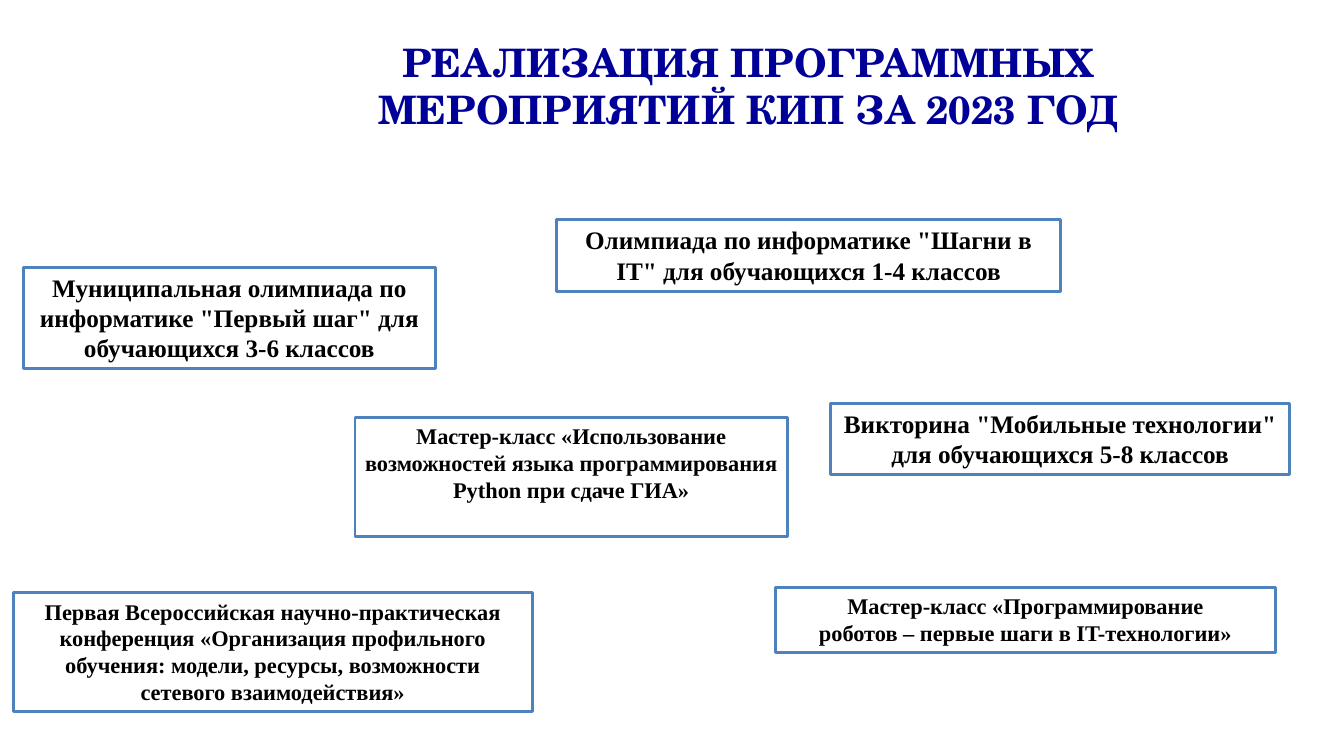
from pptx import Presentation
from pptx.dml.color import RGBColor
from pptx.enum.shapes import MSO_SHAPE
from pptx.enum.text import MSO_ANCHOR, PP_ALIGN
from pptx.util import Pt

RECTANGLE = MSO_SHAPE.RECTANGLE
TOP = MSO_ANCHOR.TOP
CENTER = PP_ALIGN.CENTER

PX = 9144
SLIDE_SIZE = (1333, 750)
COLORS = {"title": "000099", "text": "000000", "fill": "FFFFFF", "border": "4F81BD"}
TITLE_FONT = "TeX Gyre Schola"
EVENT_FONT = "Times New Roman"

TITLE = "РЕАЛИЗАЦИЯ ПРОГРАММНЫХ МЕРОПРИЯТИЙ КИП ЗА 2023 ГОД"
TITLE_BOX = (305, 33, 874, 104)

EVENTS = [
    ((552, 218, 500, 71), 18,
     ['Олимпиада по информатике "Шагни в IT" для обучающихся 1-4 классов']),
    ((23, 265, 409, 101), 18,
     ['Муниципальная олимпиада по информатике "Первый шаг" для обучающихся 3-6 классов']),
    ((824, 400, 455, 71), 18,
     ['Викторина "Мобильные технологии"', "для обучающихся 5-8 классов"]),
    ((13, 588, 515, 118), 16,
     ["Первая Всероссийская научно-практическая конференция «Организация профильного "
      "обучения: модели, ресурсы, возможности сетевого взаимодействия»"]),
    ((352, 414, 429, 118), 16,
     ["Мастер-класс «Использование возможностей языка программирования",
      "Python при сдаче ГИА»"]),
    ((769, 583, 496, 64), 16,
     ["Мастер-класс «Программирование", "роботов – первые шаги в IT-технологии»"]),
]


def color(name):
    return RGBColor.from_string(COLORS[name])


def emu(lengths):
    return [length * PX for length in lengths]


def write_text(shape, lines, font_name, size, color_name):
    frame = shape.text_frame
    frame.word_wrap = True
    frame.vertical_anchor = TOP
    frame.text = "\n".join(lines)
    for paragraph in frame.paragraphs:
        paragraph.alignment = CENTER
        for run in paragraph.runs:
            run.font.name = font_name
            run.font.size = Pt(size)
            run.font.bold = True
            run.font.color.rgb = color(color_name)


def add_event(slide, box, size, lines):
    shape = slide.shapes.add_shape(RECTANGLE, *emu(box))
    shape.shadow.inherit = False
    shape.fill.solid()
    shape.fill.fore_color.rgb = color("fill")
    shape.line.color.rgb = color("border")
    shape.line.width = Pt(2)
    write_text(shape, lines, EVENT_FONT, size, "text")


def main():
    presentation = Presentation()
    presentation.slide_width, presentation.slide_height = emu(SLIDE_SIZE)
    slide = presentation.slides.add_slide(presentation.slide_layouts[6])
    title = slide.shapes.add_textbox(*emu(TITLE_BOX))
    write_text(title, [TITLE], TITLE_FONT, 28, "title")
    for box, size, lines in EVENTS:
        add_event(slide, box, size, lines)
    presentation.save("out.pptx")


if __name__ == "__main__":
    main()
